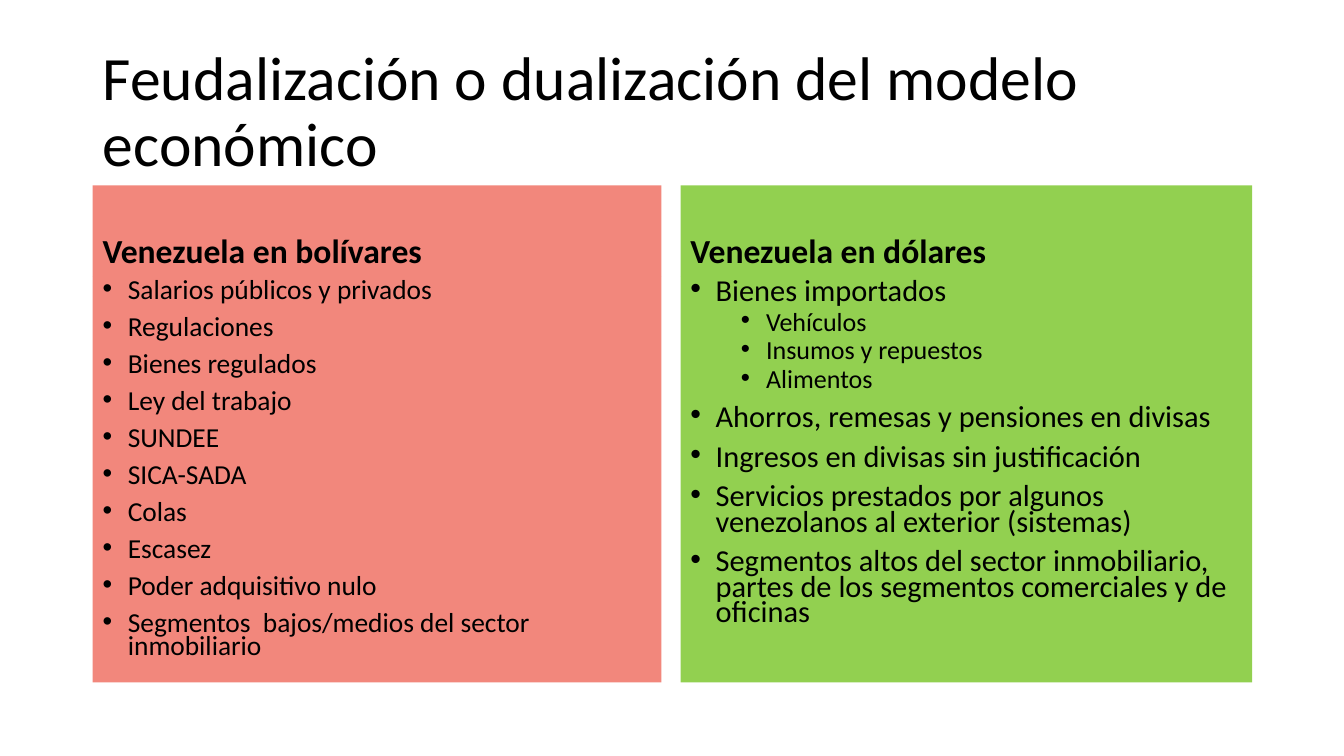
import dataclasses

import lxml.etree
import pptx
import pptx.dml.color
import pptx.enum.shapes
import pptx.enum.text
import pptx.oxml.ns
import pptx.util

BLACK = pptx.dml.color.RGBColor(0x00, 0x00, 0x00)
SALMON = pptx.dml.color.RGBColor(0xF2, 0x87, 0x7C)
GREEN = pptx.dml.color.RGBColor(0x92, 0xD0, 0x50)
FONT = "Calibri"
SLIDE_WIDTH = pptx.util.Inches(13.33)
SLIDE_HEIGHT = pptx.util.Inches(7.5)
LEFT_MARGIN = 0.92 / 13.33
TITLE_TOP, TITLE_HEIGHT = 0.4 / 7.5, 1.45 / 7.5
HEADING_TOP, HEADING_HEIGHT = 1.84 / 7.5, 0.9 / 7.5
LIST_HEIGHT = 4.03 / 7.5
INDENT = 0.25
LEVEL_STEP = 0.5
SPACE_BEFORE = (10, 5)


@dataclasses.dataclass(frozen=True)
class Item:
    text: str
    level: int = 0


@dataclasses.dataclass(frozen=True)
class Economy:
    heading: str
    left: float
    width: float
    color: pptx.dml.color.RGBColor
    sizes: tuple[float, ...]
    items: tuple[Item, ...]


ECONOMIES = (
    Economy(
        "Venezuela en bolívares", LEFT_MARGIN, 5.64 / 13.33, SALMON, (19.6,),
        (
            Item("Salarios públicos y privados"),
            Item("Regulaciones"),
            Item("Bienes regulados"),
            Item("Ley del trabajo"),
            Item("SUNDEE"),
            Item("SICA-SADA"),
            Item("Colas"),
            Item("Escasez"),
            Item("Poder adquisitivo nulo"),
            Item("Segmentos  bajos/medios del sector inmobiliario"),
        ),
    ),
    Economy(
        "Venezuela en dólares", 6.75 / 13.33, 5.67 / 13.33, GREEN, (21.7, 18.6),
        (
            Item("Bienes importados"),
            Item("Vehículos", 1),
            Item("Insumos y repuestos", 1),
            Item("Alimentos", 1),
            Item("Ahorros, remesas y pensiones en divisas"),
            Item("Ingresos en divisas sin justificación"),
            Item("Servicios prestados por algunos venezolanos al exterior (sistemas)"),
            Item("Segmentos altos del sector inmobiliario, partes de los "
                 "segmentos comerciales y de oficinas"),
        ),
    ),
)


def across(share: float) -> int:
    return round(SLIDE_WIDTH * share)


def down(share: float) -> int:
    return round(SLIDE_HEIGHT * share)


def format_para(para, size: float, line_spacing: float, bold: bool = False) -> None:
    para.alignment = pptx.enum.text.PP_ALIGN.LEFT
    para.line_spacing = line_spacing
    para.font.name = FONT
    para.font.size = pptx.util.Pt(size)
    para.font.bold = bold
    para.font.color.rgb = BLACK


def add_bullet(para, level: int) -> None:
    para.level = level
    properties = para._p.get_or_add_pPr()
    properties.set("marL", str(pptx.util.Inches(INDENT + LEVEL_STEP * level)))
    properties.set("indent", str(-pptx.util.Inches(INDENT)))
    font = lxml.etree.SubElement(properties, pptx.oxml.ns.qn("a:buFont"))
    font.set("typeface", "Arial")
    bullet = lxml.etree.SubElement(properties, pptx.oxml.ns.qn("a:buChar"))
    bullet.set("char", "•")


def add_panel(page, economy: Economy, top: float, height: float, anchor):
    box = page.shapes.add_shape(
        pptx.enum.shapes.MSO_SHAPE.RECTANGLE,
        across(economy.left), down(top), across(economy.width), down(height),
    )
    box.shadow.inherit = False
    box.fill.solid()
    box.fill.fore_color.rgb = economy.color
    box.line.fill.background()
    box.text_frame.word_wrap = True
    box.text_frame.vertical_anchor = anchor
    return box


def add_economy(page, economy: Economy) -> None:
    heading = add_panel(page, economy, HEADING_TOP, HEADING_HEIGHT,
                        pptx.enum.text.MSO_ANCHOR.BOTTOM)
    heading.text_frame.text = economy.heading
    para = heading.text_frame.paragraphs[0]
    format_para(para, 24, 0.9, bold=True)
    para.space_before = pptx.util.Pt(SPACE_BEFORE[0])

    listing = add_panel(page, economy, HEADING_TOP + HEADING_HEIGHT, LIST_HEIGHT,
                        pptx.enum.text.MSO_ANCHOR.TOP)
    listing.text_frame.text = "\n".join(item.text for item in economy.items)
    for para, item in zip(listing.text_frame.paragraphs, economy.items):
        format_para(para, economy.sizes[item.level], 0.7)
        para.space_before = pptx.util.Pt(SPACE_BEFORE[item.level])
        add_bullet(para, item.level)


def add_title(page, text: str) -> None:
    title = page.shapes.title
    title.left, title.top = across(LEFT_MARGIN), down(TITLE_TOP)
    title.width, title.height = across(11.5 / 13.33), down(TITLE_HEIGHT)
    title.text_frame.text = text
    title.text_frame.word_wrap = True
    title.text_frame.auto_size = pptx.enum.text.MSO_AUTO_SIZE.NONE
    title.text_frame.vertical_anchor = pptx.enum.text.MSO_ANCHOR.MIDDLE
    format_para(title.text_frame.paragraphs[0], 44, 0.9)


def main() -> None:
    deck = pptx.Presentation()
    deck.slide_width, deck.slide_height = SLIDE_WIDTH, SLIDE_HEIGHT
    page = deck.slides.add_slide(deck.slide_layouts[5])
    add_title(page, "Feudalización o dualización del modelo económico")
    for economy in ECONOMIES:
        add_economy(page, economy)
    deck.save("out.pptx")


if __name__ == "__main__":
    main()
